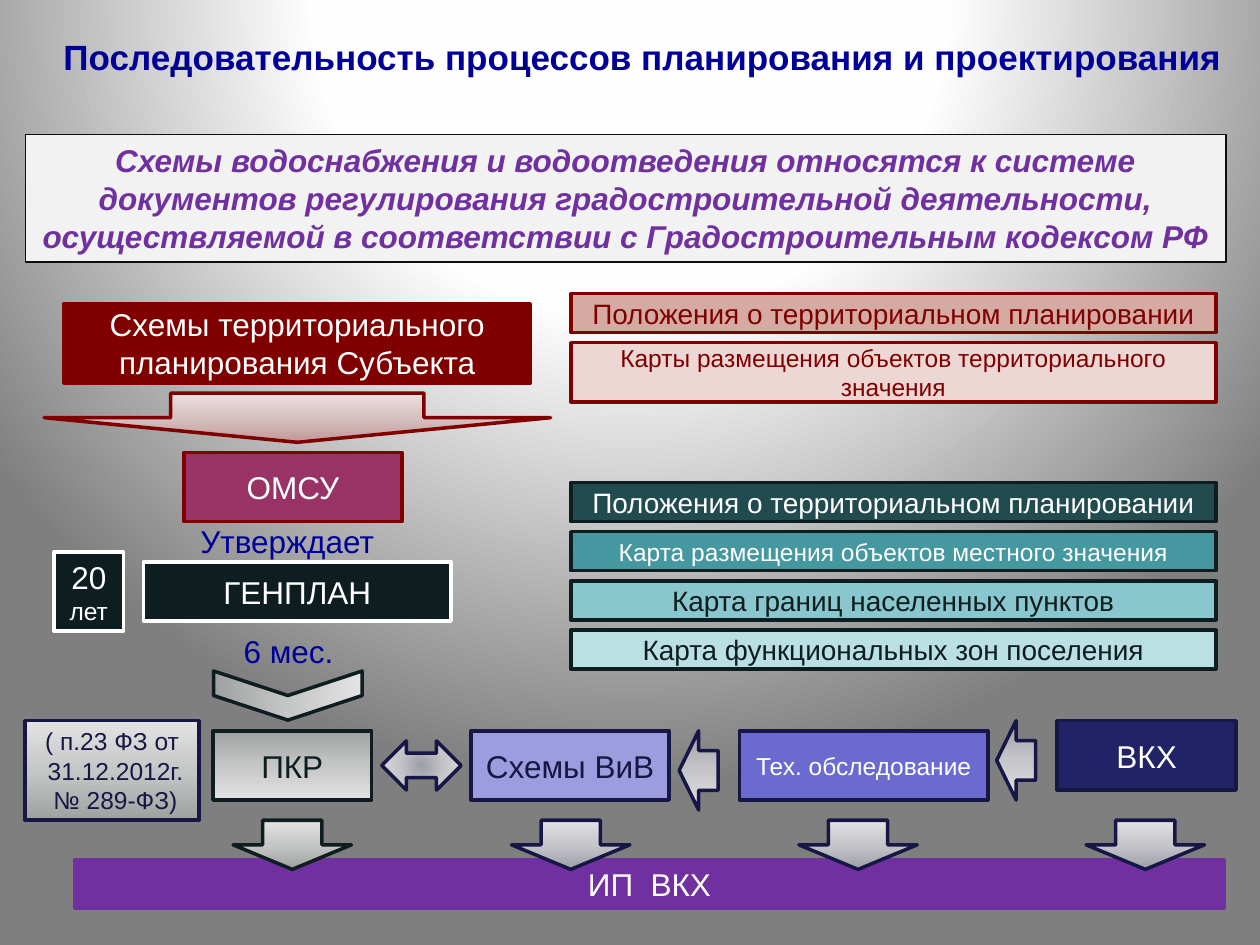
import dataclasses

import lxml.etree
import pptx
import pptx.dml.color
import pptx.enum.shapes
import pptx.enum.text
import pptx.oxml.ns
import pptx.util

Inches = pptx.util.Inches
SHAPE = pptx.enum.shapes.MSO_SHAPE
ANCHOR = pptx.enum.text.MSO_ANCHOR
qn = pptx.oxml.ns.qn


@dataclasses.dataclass(frozen=True)
class Theme:
    font: str = "Arial"
    large: int = 18
    medium: int = 16
    small: int = 14
    title: int = 20
    border: float = 2
    white: str = "FFFFFF"
    blue: str = "000099"
    purple: str = "7030A0"
    maroon: str = "800000"
    dark: str = "0E1E20"
    navy: str = "171745"
    gray: tuple = ("9FA1A1", "C5C6C6", "E3E3E3")
    bluish: tuple = ("9E9EA8", "C5C5CA", "E3E3E5")
    reddish: tuple = ("C09898", "D7C1C1", "EBE1E1")


THEME = Theme()


def rgb(value):
    return pptx.dml.color.RGBColor.from_string(value)


def set_gradient(fill, element, stops, angle=None, center=None):
    """Fill with (percent, colour) stops, along an angle or around a centre rectangle."""
    fill.gradient()
    gradient = element.find(".//" + qn("a:gradFill"))
    gradient.clear()
    gradient.set("rotWithShape", "1")
    stop_list = lxml.etree.SubElement(gradient, qn("a:gsLst"))
    for percent, color in stops:
        stop = lxml.etree.SubElement(stop_list, qn("a:gs"), pos=str(percent * 1000))
        lxml.etree.SubElement(stop, qn("a:srgbClr"), val=color)
    if center:
        around = lxml.etree.SubElement(gradient, qn("a:path"), path="circle")
        edges = {side: str(percent * 1000) for side, percent in zip("ltrb", center)}
        lxml.etree.SubElement(around, qn("a:fillToRect"), edges)
    else:
        lxml.etree.SubElement(gradient, qn("a:lin"), ang=str(angle * 60000), scaled="0")


def write_text(shape, lines, color, size, anchor=ANCHOR.MIDDLE, **font_format):
    """Write centred lines; a line is a string or a (string, size) pair."""
    frame = shape.text_frame
    frame.word_wrap = True
    frame.vertical_anchor = anchor
    for index, line in enumerate(lines):
        text, line_size = line if isinstance(line, tuple) else (line, size)
        paragraph = frame.add_paragraph() if index else frame.paragraphs[0]
        paragraph.alignment = pptx.enum.text.PP_ALIGN.CENTER
        run = paragraph.add_run()
        run.text = text
        values = {"name": THEME.font, "size": pptx.util.Pt(line_size), **font_format}
        for name, value in values.items():
            setattr(run.font, name, value)
        run.font.color.rgb = rgb(color)


def add_label(slide, box, text, size=THEME.large, **font_format):
    label = slide.shapes.add_textbox(*map(Inches, box))
    write_text(label, [text], THEME.blue, size, **font_format)


def add_figure(slide, kind, box, fill, line, width=THEME.border, angle=270, center=None):
    """Add a preset shape; a tuple of three colours as fill makes a gradient."""
    shape = slide.shapes.add_shape(kind, *map(Inches, box))
    shape.shadow.inherit = False
    if isinstance(fill, tuple):
        set_gradient(shape.fill, shape.element.spPr, zip((0, 50, 100), fill), angle, center)
    else:
        shape.fill.solid()
        shape.fill.fore_color.rgb = rgb(fill)
    shape.line.color.rgb = rgb(line)
    shape.line.width = pptx.util.Pt(width)
    return shape


def add_block(slide, box, lines, fill, line, color=THEME.white, size=THEME.large, angle=270):
    block = add_figure(slide, SHAPE.RECTANGLE, box, fill, line, angle=angle)
    write_text(block, lines, color, size)


def add_header(slide, left, top, width):
    add_label(slide, (left, top, width, 0.47),
              "Последовательность процессов планирования и проектирования",
              THEME.title, bold=True)
    banner = add_figure(slide, SHAPE.RECTANGLE, (left, top + 0.86, width - 0.27, 1.01),
                        "F2F2F2", "0D0D0D", width=0.75)
    write_text(banner, ["Схемы водоснабжения и водоотведения относятся к системе документов "
                        "регулирования градостроительной деятельности, осуществляемой "
                        "в соответствии с Градостроительным кодексом РФ"],
               THEME.purple, THEME.large, ANCHOR.TOP, bold=True, italic=True)


def add_regional_plan(slide, left, top, width):
    add_block(slide, (left + 0.16, top, width - 0.32, 0.63),
              ["Схемы территориального планирования Субъекта"], THEME.maroon, THEME.maroon)
    add_figure(slide, SHAPE.DOWN_ARROW, (left, top + 0.71, width, 0.39),
               THEME.reddish, THEME.maroon)
    add_block(slide, (left + 1.11, top + 1.18, 1.73, 0.55), ["ОМСУ"], "993366", THEME.maroon)


def add_master_plan(slide, left, top, width):
    add_label(slide, (left + 0.55, top, width - 0.55, 0.31), "Утверждает")
    add_block(slide, (left, top + 0.24, 0.55, 0.63), ["20", ("лет", THEME.small)],
              THEME.dark, THEME.white)
    add_block(slide, (left + 0.71, top + 0.32, width - 0.71, 0.47), ["ГЕНПЛАН"],
              THEME.dark, THEME.white)
    add_label(slide, (left + 1.11, top + 0.87, 1.5, 0.31), "6 мес.")
    chevron = add_figure(slide, SHAPE.CHEVRON, (left + 1.66, top + 0.79, 0.39, 1.18),
                         THEME.gray, THEME.dark)
    chevron.rotation = 90


def add_document_list(slide, left, top, width, line, documents):
    """Stack documents given as (text, height, fill, text colour, size)."""
    gap = 0.08
    for text, height, fill, color, size in documents:
        add_block(slide, (left, top, width, height), [text], fill, line, color, size)
        top += height + gap


def add_process_row(slide, left, top, width):
    add_block(slide, (left, top, 1.38, 0.79),
              ["( п.23 ФЗ от", " 31.12.2012г.", " № 289-ФЗ)"],
              THEME.gray, THEME.navy, THEME.navy, THEME.small)
    steps = [
        (1.49, 0.08, 1.26, "ПКР", THEME.gray, THEME.dark, THEME.dark, THEME.large),
        (3.54, 0.08, 1.57, "Схемы ВиВ", "9C9CDF", THEME.navy, THEME.navy, THEME.large),
        (5.67, 0.08, 1.97, "Тех. обследование", "6B6BCF", THEME.navy, THEME.white, THEME.small),
        (8.19, 0, 1.42, "ВКХ", "222267", THEME.navy, THEME.white, THEME.large),
    ]
    for x, y, step_width, text, fill, line, color, size in steps:
        add_block(slide, (left + x, top + y, step_width, 0.55), [text],
                  fill, line, color, size, angle=90)
    add_figure(slide, SHAPE.LEFT_RIGHT_ARROW, (left + 2.83, top + 0.16, 0.63, 0.39),
               THEME.bluish, THEME.navy, center=(50, 50, 50, 50))
    for x, y in ((5.19, 0.08), (7.71, 0)):
        add_figure(slide, SHAPE.LEFT_ARROW, (left + x, top + y, 0.31, 0.63),
                   THEME.bluish, THEME.navy, angle=90)
    add_block(slide, (left + 0.39, top + 1.1, width - 0.48, 0.39), ["ИП  ВКХ"],
              THEME.purple, THEME.purple)
    for x, fill, line in ((1.65, THEME.gray, THEME.dark), (3.86, THEME.bluish, THEME.navy),
                          (6.14, THEME.bluish, THEME.navy), (8.42, THEME.bluish, THEME.navy)):
        add_figure(slide, SHAPE.DOWN_ARROW, (left + x, top + 0.79, 0.94, 0.39), fill, line)


def main():
    presentation = pptx.Presentation()
    presentation.slide_width, presentation.slide_height = Inches(10), Inches(7.5)
    slide = presentation.slides.add_slide(presentation.slide_layouts[6])
    set_gradient(slide.background.fill, slide.element,
                 [(0, "FFFFFF"), (40, "FEFEFE"), (100, "7F7F7F")], center=(50, -80, 50, 180))

    add_header(slide, 0.2, 0.21, 9.8)
    add_regional_plan(slide, 0.35, 2.41, 4.02)
    add_master_plan(slide, 0.43, 4.14, 3.15)
    add_document_list(slide, 4.53, 2.33, 5.12, THEME.maroon, [
        ("Положения о территориальном планировании", 0.31, "D5AAA3", THEME.maroon, THEME.medium),
        ("Карты размещения объектов территориального значения", 0.47, "ECD7D4",
         THEME.maroon, THEME.small),
    ])
    add_document_list(slide, 4.53, 3.83, 5.12, THEME.dark, [
        ("Положения о территориальном планировании", 0.31, "224B50", THEME.white, THEME.medium),
        ("Карта размещения объектов местного значения", 0.31, "4597A0", THEME.white, THEME.small),
        ("Карта границ населенных пунктов", 0.31, "8AC6CD", THEME.dark, THEME.medium),
        ("Карта функциональных зон поселения", 0.31, "BBE0E3", THEME.dark, THEME.medium),
    ])
    add_process_row(slide, 0.2, 5.72, 9.61)
    presentation.save("out.pptx")


if __name__ == "__main__":
    main()
